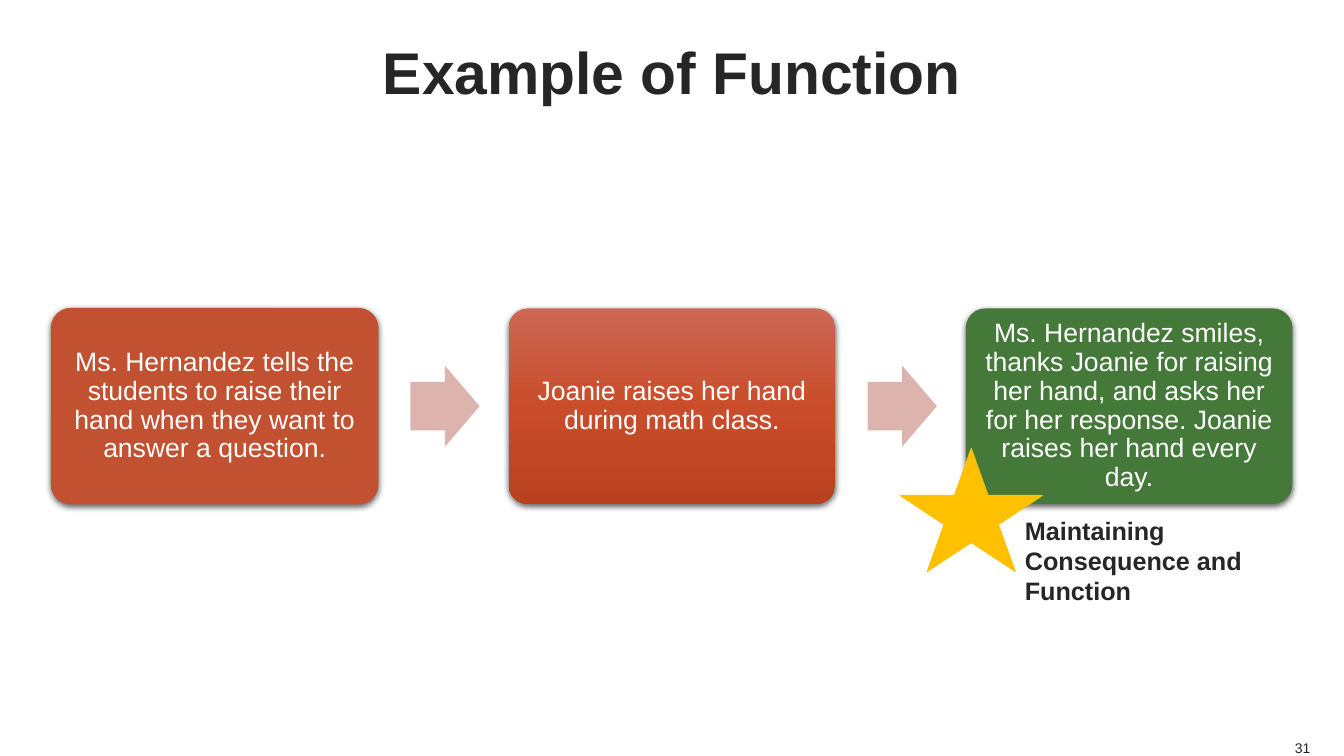
from copy import deepcopy

from lxml import etree
from pptx import Presentation
from pptx.dml.color import RGBColor
from pptx.enum.shapes import MSO_SHAPE
from pptx.enum.text import MSO_ANCHOR, PP_ALIGN
from pptx.oxml.ns import qn
from pptx.util import Pt

ROUNDED = MSO_SHAPE.ROUNDED_RECTANGLE
ARROW = MSO_SHAPE.RIGHT_ARROW
STAR = MSO_SHAPE.STAR_5_POINT
MIDDLE = MSO_ANCHOR.MIDDLE
BOTTOM = MSO_ANCHOR.BOTTOM
LEFT = PP_ALIGN.LEFT
CENTER = PP_ALIGN.CENTER
RIGHT = PP_ALIGN.RIGHT

INK = RGBColor(0x26, 0x26, 0x26)
WHITE = RGBColor(0xFF, 0xFF, 0xFF)
RUST = RGBColor(0xC2, 0x51, 0x31)
GREEN = RGBColor(0x44, 0x79, 0x39)
PINK = RGBColor(0xDD, 0xB3, 0xAE)
GOLD = RGBColor(0xFF, 0xC0, 0x00)
GRADIENT = [
    (0, RGBColor(0xCC, 0x68, 0x55)),
    (0.5, RGBColor(0xC9, 0x4D, 0x2A)),
    (1, RGBColor(0xB9, 0x41, 0x1F)),
]

BOX_LEFT, BOX_TOP, BOX_WIDTH, BOX_HEIGHT = 36.7, 220.3, 233.3, 139.7
BOX_PITCH = 326.6
ARROW_OFFSET, ARROW_WIDTH, ARROW_HEIGHT = 256.4, 49.5, 57.8
ARROW_TOP = BOX_TOP + (BOX_HEIGHT - ARROW_HEIGHT) / 2

STEPS = [
    ("Ms. Hernandez tells the students to raise their hand when they want to "
     "answer a question.", RUST),
    ("Joanie raises her hand during math class.", None),
    ("Ms. Hernandez smiles, thanks Joanie for raising her hand, and asks her for "
     "her response. Joanie raises her hand every day.", GREEN),
]


def write_text(shape, text, size, color, alignment, bold=False, margin=None):
    frame = shape.text_frame
    frame.text = text
    frame.word_wrap = True
    if margin is not None:
        frame.margin_left = frame.margin_right = Pt(margin)
        frame.margin_top = frame.margin_bottom = Pt(margin)
    paragraph = frame.paragraphs[0]
    paragraph.alignment = alignment
    paragraph.font.name = "Arial"
    paragraph.font.size = Pt(size)
    paragraph.font.bold = bold
    paragraph.font.color.rgb = color
    return frame


def add_plain_shape(kind, left, top, width, height, color=None):
    shape = slide.shapes.add_shape(kind, Pt(left), Pt(top), Pt(width), Pt(height))
    shape.shadow.inherit = False
    shape.line.fill.background()
    if color is not None:
        shape.fill.solid()
        shape.fill.fore_color.rgb = color
    return shape


presentation = Presentation()
presentation.slide_width = Pt(960)
presentation.slide_height = Pt(540)
slide = presentation.slides.add_slide(presentation.slide_layouts[5])

title = slide.shapes.title
title.left, title.top, title.width, title.height = Pt(36), Pt(0), Pt(888), Pt(100.8)
title_frame = write_text(title, "Example of Function", 42, INK, CENTER, True, 0)
title_frame.vertical_anchor = MIDDLE

for index, (text, color) in enumerate(STEPS):
    left = BOX_LEFT + index * BOX_PITCH
    box = add_plain_shape(ROUNDED, left, BOX_TOP, BOX_WIDTH, BOX_HEIGHT, color)
    box.adjustments[0] = 0.1
    properties = box._element.spPr

    if color is None:
        box.fill.gradient()
        box.fill.gradient_angle = 270
        stop_list = properties.find(qn("a:gradFill")).find(qn("a:gsLst"))
        stop_list.append(deepcopy(stop_list[0]))
        for stop, (position, stop_color) in zip(box.fill.gradient_stops, GRADIENT):
            stop.position = position
            stop.color.rgb = stop_color
    if color == RUST:
        box.line.color.rgb = RUST
        box.line.width = Pt(0.75)

    shadow = etree.SubElement(
        properties.find(qn("a:effectLst")), qn("a:outerShdw"),
        blurRad=str(Pt(4.5)), dist=str(Pt(1.5)), dir="5400000", rotWithShape="0")
    shadow_color = etree.SubElement(shadow, qn("a:srgbClr"), val="000000")
    etree.SubElement(shadow_color, qn("a:alpha"), val="63000")

    frame = write_text(box, text, 19, WHITE, CENTER, margin=6)
    frame.vertical_anchor = MIDDLE
    frame.paragraphs[0].line_spacing = 0.9

    if index < len(STEPS) - 1:
        arrow = add_plain_shape(
            ARROW, left + ARROW_OFFSET, ARROW_TOP, ARROW_WIDTH, ARROW_HEIGHT, PINK)
        arrow.adjustments[0] = 0.6
        arrow.adjustments[1] = 0.5

slide_number = slide.shapes.add_textbox(Pt(923.8), Pt(528), Pt(12.2), Pt(12))
number_frame = write_text(slide_number, "31", 10, INK, RIGHT, margin=0)
number_frame.word_wrap = False
number_frame.vertical_anchor = BOTTOM

caption = slide.shapes.add_textbox(Pt(725), Pt(364.3), Pt(234.7), Pt(72.7))
write_text(caption, "Maintaining Consequence and Function", 18, INK, LEFT, True)

star = add_plain_shape(STAR, 643, 320.4, 101.5, 87.8, GOLD)
star.line.color.rgb = GOLD
star.line.width = Pt(0.75)

presentation.save("out.pptx")
